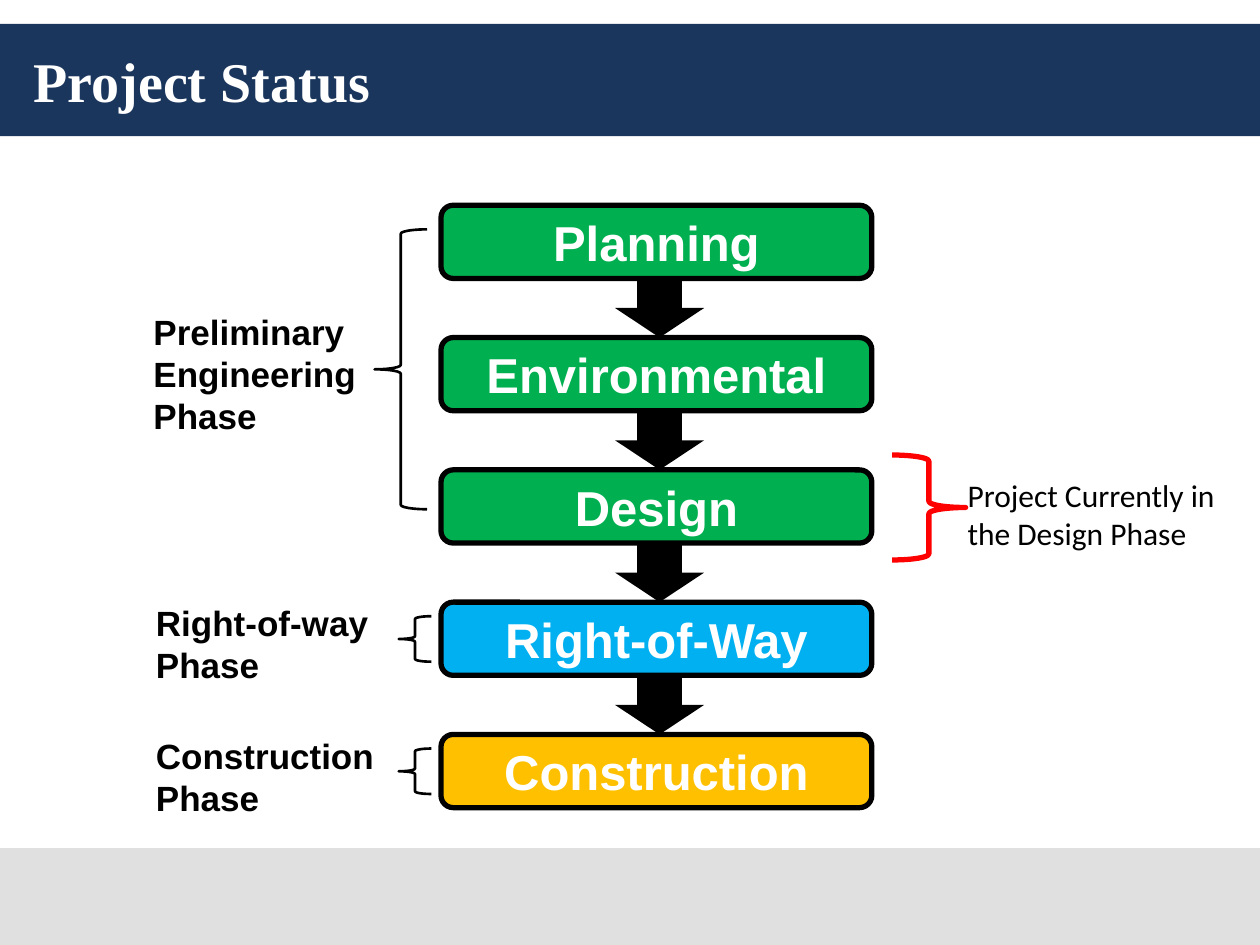
from dataclasses import dataclass

from pptx import Presentation
from pptx.dml.color import RGBColor
from pptx.enum.shapes import MSO_SHAPE
from pptx.enum.text import MSO_ANCHOR, PP_ALIGN
from pptx.util import Pt

RECTANGLE = MSO_SHAPE.RECTANGLE
STEP = MSO_SHAPE.FLOWCHART_ALTERNATE_PROCESS
ARROW = MSO_SHAPE.DOWN_ARROW
BRACE = MSO_SHAPE.RIGHT_BRACE
TOP, MIDDLE = MSO_ANCHOR.TOP, MSO_ANCHOR.MIDDLE
LEFT, CENTER = PP_ALIGN.LEFT, PP_ALIGN.CENTER


@dataclass(frozen=True)
class Theme:
    """Colours, fonts and type sizes of the slide."""
    navy: str = "1B365D"
    grey: str = "E0E0E0"
    white: str = "FFFFFF"
    black: str = "000000"
    green: str = "00B050"
    blue: str = "00B0F0"
    amber: str = "FFC000"
    red: str = "FF0000"
    title_font: str = "Times New Roman"
    flow_font: str = "Arial"
    note_font: str = "Calibri"
    title_size: int = 32
    step_size: int = 28
    label_size: int = 20
    note_size: int = 18


THEME = Theme()


def write(shape, lines, font, size, color, bold=True, align=LEFT, anchor=TOP):
    """Write one paragraph per line into a shape."""
    frame = shape.text_frame
    frame.word_wrap = True
    frame.vertical_anchor = anchor
    for index, line in enumerate(lines):
        para = frame.paragraphs[0] if index == 0 else frame.add_paragraph()
        para.alignment = align
        span = para.add_run()
        span.text = line
        span.font.name = font
        span.font.size = Pt(size)
        span.font.bold = bold
        span.font.color.rgb = RGBColor.from_string(color)


def add_shape(page, kind, box, fill=None, line=None, weight=0):
    """Add a preset shape with an optional fill and outline."""
    shape = page.shapes.add_shape(kind, *map(Pt, box))
    shape.shadow.inherit = False
    if fill:
        shape.fill.solid()
        shape.fill.fore_color.rgb = RGBColor.from_string(fill)
    else:
        shape.fill.background()
    if line:
        shape.line.color.rgb = RGBColor.from_string(line)
        shape.line.width = Pt(weight)
    else:
        shape.line.fill.background()
    return shape


def add_header(page, box, text):
    """Draw the title band and lay the title over it."""
    left, top, width, height = box
    add_shape(page, RECTANGLE, box, THEME.navy)
    title = page.shapes.title
    title.element.getparent().append(title.element)
    title.left, title.top = Pt(left + 12), Pt(top)
    title.width, title.height = Pt(width - 24), Pt(height)
    write(title, [text], THEME.title_font, THEME.title_size, THEME.white, anchor=MIDDLE)


def add_flow(page, box, steps, pitch):
    """Stack the steps from the top of the box and link them with arrows."""
    left, top, width, height = box
    step_height = height - pitch * (len(steps) - 1)
    for index, (name, color) in enumerate(steps):
        step_top = top + index * pitch
        step = add_shape(page, STEP, (left, step_top, width, step_height), color, THEME.black, 3)
        write(step, [name], THEME.flow_font, THEME.step_size, THEME.white, align=CENTER, anchor=MIDDLE)
    for index in range(len(steps) - 1):
        arrow_top = top + index * pitch + step_height
        add_shape(page, ARROW, (left + 99.4, arrow_top, 51, pitch - step_height), THEME.black)


def add_phase(page, box, lines, label_height, brace_width):
    """Place a phase label on the left and a brace at the right edge of the box."""
    left, top, width, height = box
    brace_box = (left + width - brace_width, top, brace_width, height)
    add_shape(page, BRACE, brace_box, line=THEME.black, weight=1.5).rotation = 180
    label_top = top + (height - label_height) / 2 + 3
    label = page.shapes.add_textbox(Pt(left), Pt(label_top), Pt(192), Pt(label_height))
    write(label, lines, THEME.flow_font, THEME.label_size, THEME.black)


def add_status(page, box, text):
    """Draw the red brace and the note on the current phase."""
    left, top, width, height = box
    add_shape(page, BRACE, (left, top, 42, height), line=THEME.red, weight=3)
    note = page.shapes.add_textbox(Pt(left + 36), Pt(top + 8.6), Pt(width - 36), Pt(51))
    write(note, [text], THEME.note_font, THEME.note_size, THEME.black, bold=False)


def main():
    """Build and save the deck."""
    deck = Presentation()
    deck.slide_width, deck.slide_height = Pt(720), Pt(540)
    page = deck.slides.add_slide(deck.slide_layouts[5])
    add_header(page, (0, 13.7, 720, 64.1), "Project Status")
    add_shape(page, RECTANGLE, (0, 484.6, 720, 55.4), THEME.grey)

    steps = [
        ("Planning", THEME.green),
        ("Environmental", THEME.green),
        ("Design", THEME.green),
        ("Right-of-Way", THEME.blue),
        ("Construction", THEME.amber),
    ]
    flow_top, pitch = 117.3, 75.6
    add_flow(page, (252, flow_top, 246.2, 344.2), steps, pitch)

    add_phase(page, (80.6, 131, 163.4, 160), ["Preliminary Engineering", "Phase"], 80, 30)
    for index, text in ((3, "Right-of-way Phase"), (4, "Construction Phase")):
        phase_box = (82, flow_top + index * pitch + 8, 164.5, 26)
        add_phase(page, phase_box, [text], 55.4, 18.7)

    add_status(page, (509.8, 260, 210.2, 60), "Project Currently in the Design Phase")
    deck.save("out.pptx")


if __name__ == "__main__":
    main()
